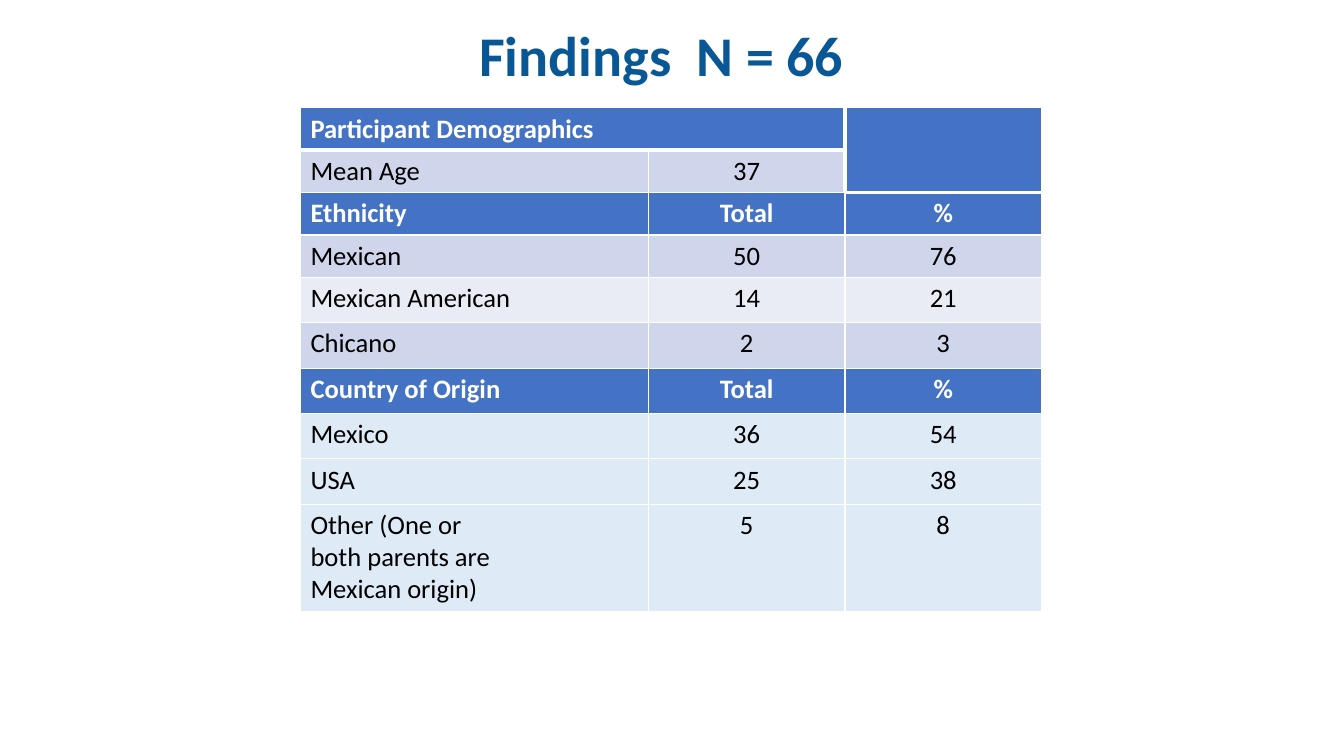
from lxml.etree import SubElement
from pptx import Presentation
from pptx.dml.color import RGBColor
from pptx.enum.text import MSO_ANCHOR, PP_ALIGN
from pptx.oxml.ns import qn
from pptx.util import Inches, Pt

TITLE = "Findings  N = 66"
ROWS = [
    ("header", "Participant Demographics", "", ""),
    ("band", "Mean Age", "37", ""),
    ("header", "Ethnicity", "Total", "%"),
    ("band", "Mexican", "50", "76"),
    ("light", "Mexican American", "14", "21"),
    ("band", "Chicano", "2", "3"),
    ("header", "Country of Origin", "Total", "%"),
    ("origin", "Mexico", "36", "54"),
    ("origin", "USA", "25", "38"),
    ("origin", "Other (One or\nboth parents are\nMexican origin)", "5", "8"),
]
COLORS = {
    "title": "095895", "header": "4472C4", "band": "CFD5EA", "light": "E9EBF5",
    "origin": "DEEBF7", "white": "FFFFFF", "text": "000000",
}
COLUMN_WIDTHS = [3.45, 1.95, 1.95]
ROW_HEIGHTS = [0.42] * 4 + [0.45] * 5 + [1.06]
MERGES = [((0, 0), (0, 1)), ((0, 2), (1, 2))]
HEAVY_EDGES = {(0, 0): "RB", (0, 1): "RB", (0, 2): "LB", (1, 1): "R", (1, 2): "LB"}


def color(name):
    return RGBColor.from_string(COLORS[name])


def set_font(font, size, bold, name):
    for key, value in {"name": "Calibri", "size": Pt(size), "bold": bold}.items():
        setattr(font, key, value)
    font.color.rgb = color(name)


def set_borders(cell, heavy):
    properties = cell._tc.get_or_add_tcPr()
    for index, side in enumerate("LRTB"):
        width = Pt(3 if side in heavy else 1)
        line = SubElement(properties, qn(f"a:ln{side}"), w=str(width))
        fill = SubElement(line, qn("a:solidFill"))
        SubElement(fill, qn("a:srgbClr"), val=COLORS["white"])
        properties.insert(index, line)


def add_title(page):
    box = page.shapes.title
    place = {"left": 2.25, "top": 0.27, "width": 8.62, "height": 0.62}
    for key, value in place.items():
        setattr(box, key, Inches(value))
    frame = box.text_frame
    frame.text = TITLE
    frame.vertical_anchor = MSO_ANCHOR.MIDDLE
    para = frame.paragraphs[0]
    para.alignment = PP_ALIGN.CENTER
    para.line_spacing = 0.9
    set_font(para.runs[0].font, 40, True, "title")


def add_demographics(page):
    frame = page.shapes.add_table(
        len(ROWS), len(COLUMN_WIDTHS), Inches(2.98), Inches(1.07),
        Inches(sum(COLUMN_WIDTHS)), Inches(sum(ROW_HEIGHTS)))
    table = frame.table
    for column, width in zip(table.columns, COLUMN_WIDTHS):
        column.width = Inches(width)
    for row, height in zip(table.rows, ROW_HEIGHTS):
        row.height = Inches(height)
    for start, end in MERGES:
        table.cell(*start).merge(table.cell(*end))
    for r, (kind, *texts) in enumerate(ROWS):
        header = kind == "header"
        for c, text in enumerate(texts):
            cell = table.cell(r, c)
            cell.fill.solid()
            cell.fill.fore_color.rgb = color("header" if (r, c) == (1, 2) else kind)
            set_borders(cell, HEAVY_EDGES.get((r, c), ""))
            cell.text = text
            for para in cell.text_frame.paragraphs:
                para.alignment = PP_ALIGN.CENTER if c else PP_ALIGN.LEFT
                for span in para.runs:
                    set_font(span.font, 19, header, "white" if header else "text")


def main():
    deck = Presentation()
    deck.slide_width, deck.slide_height = Inches(13.33), Inches(7.5)
    page = deck.slides.add_slide(deck.slide_layouts[5])
    add_demographics(page)
    add_title(page)
    deck.save("out.pptx")


if __name__ == "__main__":
    main()
